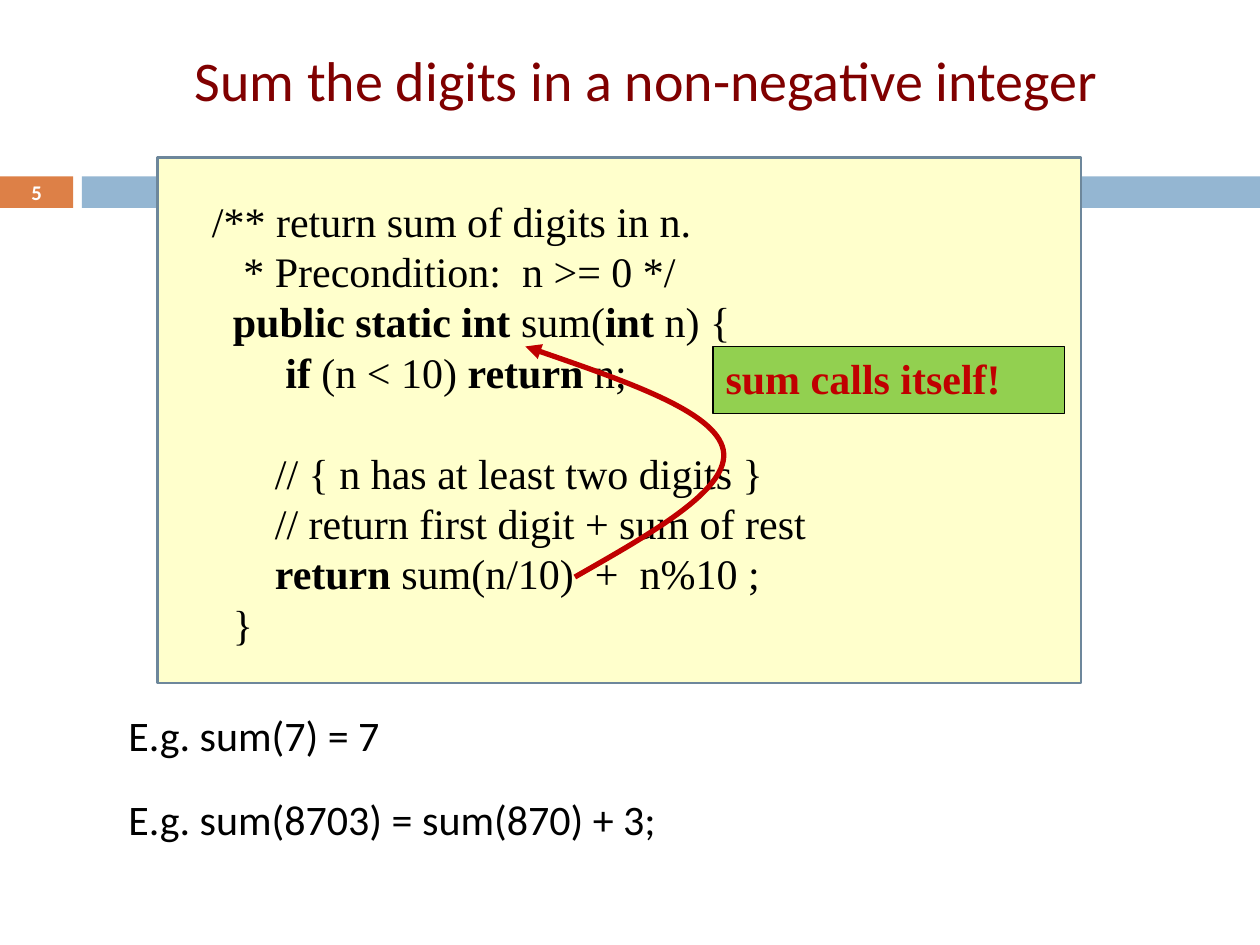
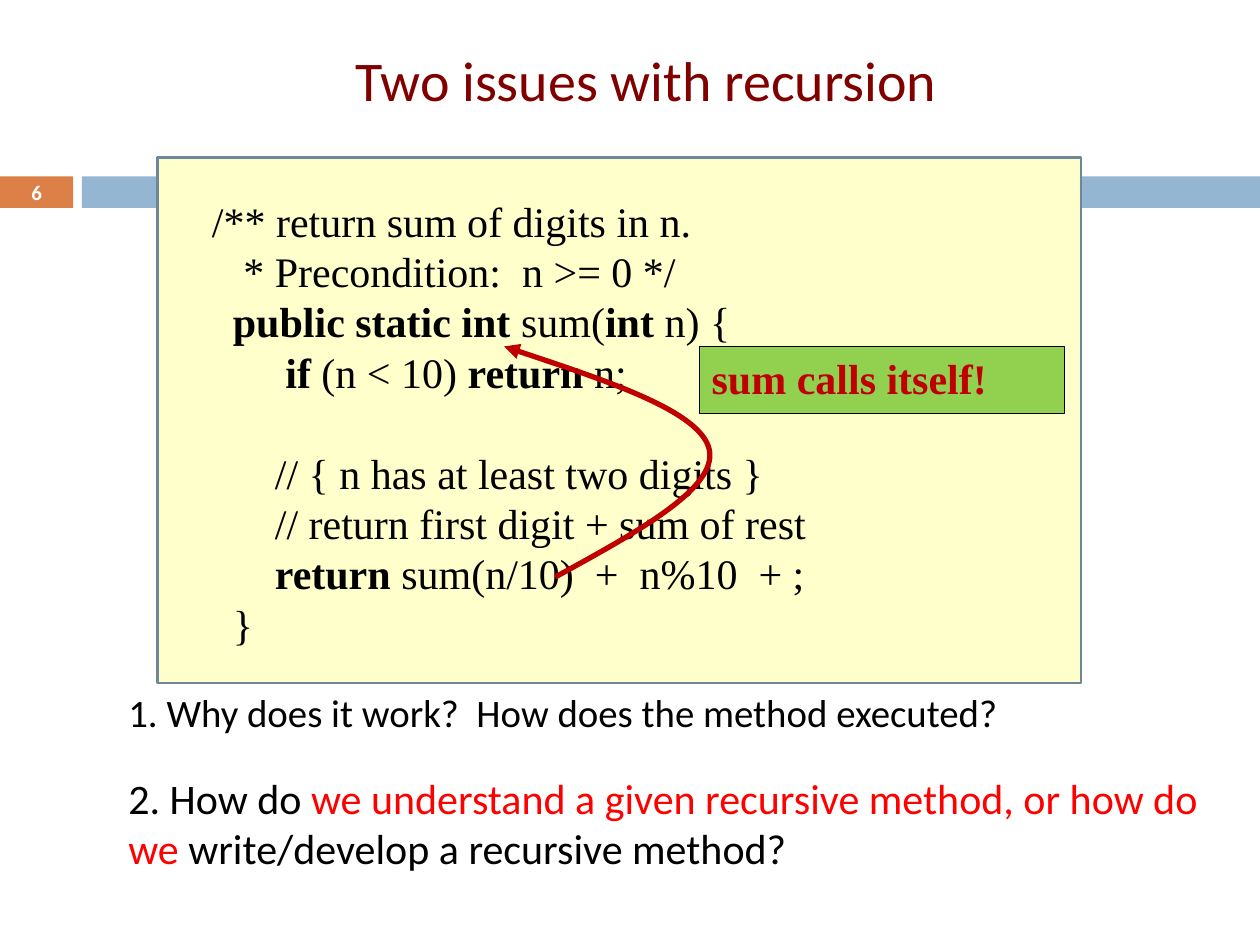
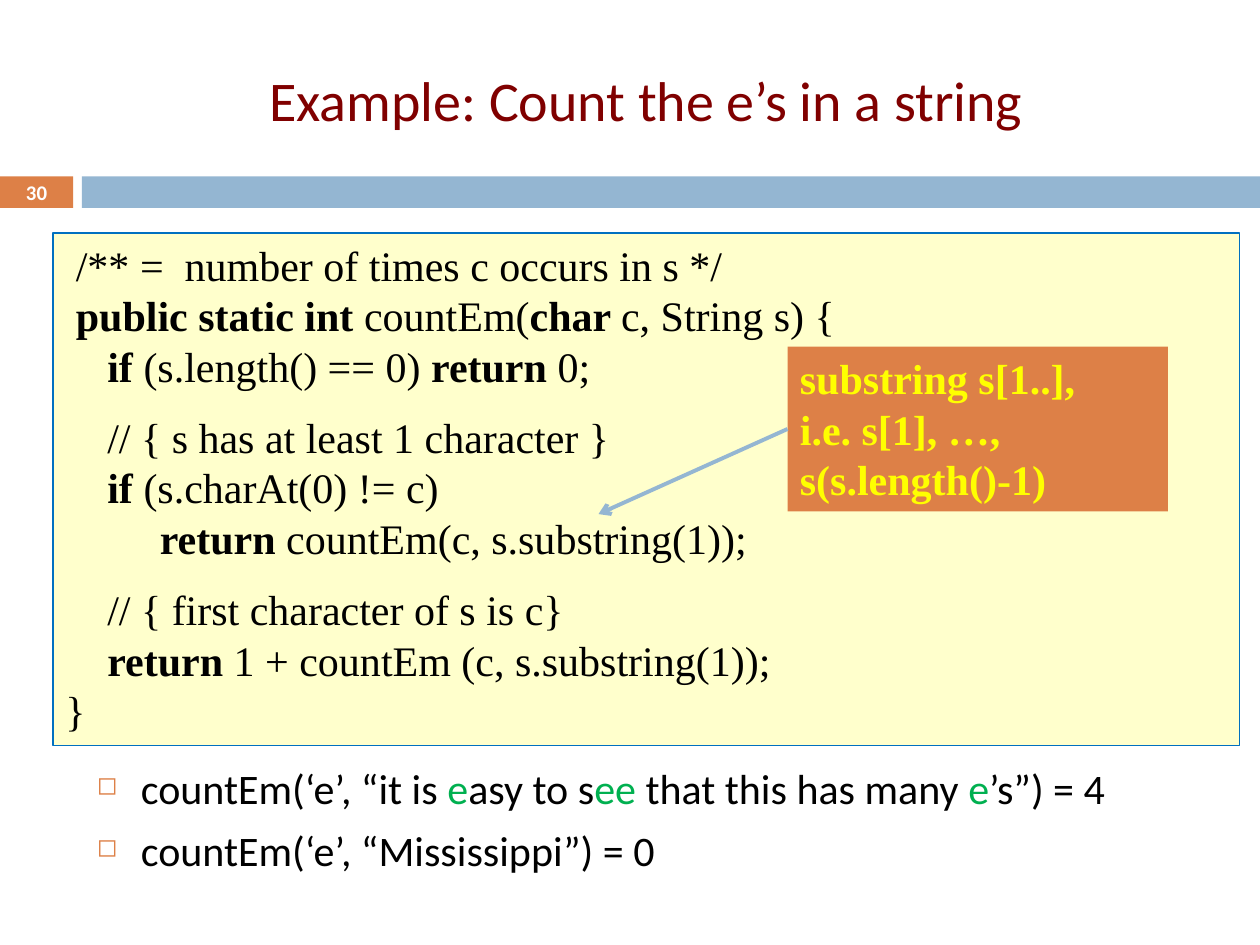
from dataclasses import dataclass
from typing import Optional

import lxml.etree
import pptx
import pptx.dml.color
import pptx.enum.shapes
import pptx.enum.text
import pptx.oxml.ns
import pptx.util

Inches = pptx.util.Inches
Pt = pptx.util.Pt
RGBColor = pptx.dml.color.RGBColor
Shapes = pptx.enum.shapes.MSO_SHAPE
Connectors = pptx.enum.shapes.MSO_CONNECTOR
Anchor = pptx.enum.text.MSO_ANCHOR
Align = pptx.enum.text.PP_ALIGN
qn = pptx.oxml.ns.qn

BLACK = RGBColor(0x00, 0x00, 0x00)
WHITE = RGBColor(0xFF, 0xFF, 0xFF)
MAROON = RGBColor(0x80, 0x00, 0x00)
ORANGE = RGBColor(0xDD, 0x80, 0x47)
SKY = RGBColor(0x94, 0xB6, 0xD2)
CREAM = RGBColor(0xFF, 0xFF, 0xCC)
SLATE = RGBColor(0x6D, 0x87, 0x9B)
BLUE = RGBColor(0x00, 0x70, 0xC0)
CRIMSON = RGBColor(0xC0, 0x00, 0x00)
LIME = RGBColor(0x92, 0xD0, 0x50)
RED = RGBColor(0xFF, 0x00, 0x00)
GREEN = RGBColor(0x00, 0xB0, 0x50)
YELLOW = RGBColor(0xFF, 0xFF, 0x00)

SANS = "Calibri"
SERIF = "Times New Roman"
SPACE_WIDTH = 1 / 12
BLANK_LINE = 28.8
ARROW_BEND = (
    ((0.48, 0.26), (0.96, 0.52), (1.0, 0.82)),
    ((1.04, 1.13), (0.64, 1.48), (0.25, 1.83)),
)


@dataclass(frozen=True)
class Area:
    left: float
    top: float
    width: float
    height: float

    def lengths(self) -> tuple:
        return tuple(Inches(value) for value in (self.left, self.top, self.width, self.height))


@dataclass(frozen=True)
class Line:
    text: str
    spaces: int = 0
    before: float = 0


@dataclass(frozen=True)
class Statement:
    text: str
    area: Area
    size: float = 24


@dataclass(frozen=True)
class SumSlide:
    number: int
    title: str
    return_line: str
    arrow_left: float
    arrow_width: float
    callout: Area
    statements: tuple


SUM_SLIDES = (
    SumSlide(
        5, "Sum the digits in a non-negative integer",
        "|return |sum(n/10)  +  n%10 ;",
        4.17, 1.57, Area(5.66, 2.75, 2.79, 0.53),
        (
            Statement("E.g. sum(7) = 7", Area(0.92, 5.58, 7.25, 0.58)),
            Statement("E.g. sum(8703) = sum(870) + 3;", Area(0.92, 6.25, 8.92, 0.58)),
        ),
    ),
    SumSlide(
        6, "Two issues with recursion",
        "|return |sum(n/10)  +  n%10  + ;",
        4.0, 1.63, Area(5.55, 2.75, 2.9, 0.53),
        (
            Statement("1. Why does it work?  How does the method executed?",
                      Area(0.92, 5.42, 7.25, 0.58), 22.2),
            Statement("2. How do |we understand a given recursive method, or how do we |"
                      "write/develop a recursive method?", Area(0.92, 6.08, 8.92, 1)),
        ),
    ),
)

COUNT_CODE = (
    Line("/** =  number of times c occurs in s */", 1),
    Line("|public static int |countEm(|char |c, String s) {", 1),
    Line("|if |(s.length() == 0) |return |0;", 4),
    Line("// { s has at least 1 character }", 4, 12),
    Line("|if |(s.charAt(0) != c)", 4),
    Line("|return |countEm(c, s.substring(1));", 9),
    Line("// { first character of s is c}", 4, 12),
    Line("|return |1 + countEm (c, s.substring(1));", 4),
    Line("}"),
)


def sum_code(return_line: str) -> tuple:
    return (
        Line("/** return sum of digits in n.", 1),
        Line("* Precondition:  n >= 0 */", 4),
        Line("|public static int| sum(|int| n) {", 3),
        Line("|if| (n < 10) |return| n;", 8),
        Line("// { n has at least two digits }", 7, BLANK_LINE),
        Line("// return first digit + sum of rest", 7),
        Line(return_line, 7),
        Line("}", 3),
    )


def write(frame, lines, *, size: float = 24, font: str = SANS, color: RGBColor = BLACK,
          bold: bool = False, accent_bold: bool = False,
          accent_color: Optional[RGBColor] = None, align=Align.LEFT,
          anchor=Anchor.TOP, bullet: str = "") -> None:
    frame.word_wrap = True
    frame.vertical_anchor = anchor
    for index, line in enumerate(lines):
        para = frame.paragraphs[0] if index == 0 else frame.add_paragraph()
        para.alignment = align
        para.space_before = Pt(line.before)
        if line.spaces:
            para._p.get_or_add_pPr().set("marL", str(Inches(line.spaces * SPACE_WIDTH)))
        if bullet:
            add_bullet(para, bullet)
        for position, text in enumerate(line.text.split("|")):
            if not text:
                continue
            accented = position % 2 == 1
            span = para.add_run()
            span.text = text
            span.font.name = font
            span.font.size = Pt(size)
            span.font.bold = bold or (accented and accent_bold)
            span.font.color.rgb = accent_color if accented and accent_color else color


def add_bullet(para, symbol: str) -> None:
    properties = para._p.get_or_add_pPr()
    properties.set("marL", str(Inches(0.35)))
    properties.set("indent", str(Inches(-0.35)))
    tint = lxml.etree.SubElement(properties, qn("a:buClr"))
    lxml.etree.SubElement(tint, qn("a:srgbClr")).set("val", str(ORANGE))
    lxml.etree.SubElement(properties, qn("a:buSzPct")).set("val", "60000")
    lxml.etree.SubElement(properties, qn("a:buChar")).set("char", symbol)


def add_box(page, area: Area, fill: RGBColor, line: Optional[RGBColor] = None,
            weight: float = 0.75):
    box = page.shapes.add_shape(Shapes.RECTANGLE, *area.lengths())
    box.shadow.inherit = False
    box.fill.solid()
    box.fill.fore_color.rgb = fill
    if line is None:
        box.line.fill.background()
    else:
        box.line.color.rgb = line
        box.line.width = Pt(weight)
    return box


def add_text(page, area: Area, lines, **style) -> None:
    box = page.shapes.add_textbox(*area.lengths())
    write(box.text_frame, lines, **style)


def add_line_end(line, end: str, kind: str) -> None:
    lxml.etree.SubElement(line._get_or_add_ln(), qn(end)).set("type", kind)


def add_page(deck, number: int, title: str, title_height: float):
    page = deck.slides.add_slide(deck.slide_layouts[5])
    heading = page.shapes.title
    heading.left, heading.top, heading.width, heading.height = Area(
        0.67, 0.25, 8.92, title_height).lengths()
    write(heading.text_frame, [Line(title)], size=32, color=MAROON,
          align=Align.CENTER, anchor=Anchor.MIDDLE)
    number_band = add_box(page, Area(0, 1.4, 0.58, 0.25), ORANGE)
    frame = number_band.text_frame
    frame.margin_left = frame.margin_right = frame.margin_top = frame.margin_bottom = 0
    write(frame, [Line(str(number))], size=11.9, color=WHITE, bold=True,
          align=Align.CENTER, anchor=Anchor.MIDDLE)
    add_box(page, Area(0.65, 1.4, 9.35, 0.25), SKY)
    return page


def add_recursion_arrow(page, left: float, width: float) -> None:
    points = [(Inches(left + x * width), Inches(2.75 + y))
              for curve in ARROW_BEND for x, y in curve]
    builder = page.shapes.build_freeform(Inches(left), Inches(2.75))
    builder.add_line_segments(points, close=False)
    arrow = builder.convert_to_shape()
    arrow.shadow.inherit = False
    arrow.fill.background()
    arrow.line.color.rgb = CRIMSON
    arrow.line.width = Pt(3)
    add_line_end(arrow.line, "a:headEnd", "triangle")
    segments = list(arrow._element.iter(qn("a:lnTo")))
    outline = segments[0].getparent()
    for first in range(0, len(segments), 3):
        curve = lxml.etree.SubElement(outline, qn("a:cubicBezTo"))
        for segment in segments[first:first + 3]:
            curve.append(segment[0])
            outline.remove(segment)


def add_sum_page(deck, content: SumSlide) -> None:
    page = add_page(deck, content.number, content.title, 0.75)
    add_box(page, Area(1.25, 1.25, 7.33, 4.17), CREAM, SLATE, 1.5)
    add_text(page, Area(1.5, 1.5, 6.92, 3.74), sum_code(content.return_line),
             font=SERIF, accent_bold=True)
    add_recursion_arrow(page, content.arrow_left, content.arrow_width)
    callout = add_box(page, content.callout, LIME, BLACK)
    write(callout.text_frame, [Line("sum calls itself!")], font=SERIF,
          color=CRIMSON, bold=True)
    for statement in content.statements:
        add_text(page, statement.area, [Line(statement.text, before=7)],
                 size=statement.size, accent_color=RED)


def add_count_page(deck) -> None:
    page = add_page(deck, 30, "Example: Count the e’s in a string", 1.08)
    add_text(page, Area(0.67, 6, 8.92, 1), [
        Line("countEm(‘e’, “it is |e|asy to s|ee| that this has many |e|’s”) = 4", before=7),
        Line("countEm(‘e’, “Mississippi”) = 0", before=7),
    ], accent_color=GREEN, bullet="◻")
    panel = add_box(page, Area(0.42, 1.85, 9.42, 4.07), CREAM, BLUE)
    write(panel.text_frame, COUNT_CODE, font=SERIF, accent_bold=True)
    note = add_box(page, Area(6.25, 2.75, 3.02, 1.31), ORANGE)
    write(note.text_frame, [Line("substring s[1..],"), Line("i.e. s[1], …, s(s.length()-1)")],
          font=SERIF, color=YELLOW, bold=True)
    pointer = page.shapes.add_connector(
        Connectors.STRAIGHT, Inches(6.25), Inches(3.41), Inches(4.75), Inches(4.08))
    pointer.begin_connect(note, 1)
    pointer.line.color.rgb = SKY
    pointer.line.width = Pt(2.25)
    add_line_end(pointer.line, "a:tailEnd", "arrow")
    lxml.etree.SubElement(pointer._element.spPr, qn("a:effectLst"))


def main() -> None:
    deck = pptx.Presentation()
    deck.slide_width = Inches(10)
    deck.slide_height = Inches(7.5)
    for content in SUM_SLIDES:
        add_sum_page(deck, content)
    add_count_page(deck)
    deck.save("out.pptx")


if __name__ == "__main__":
    main()
